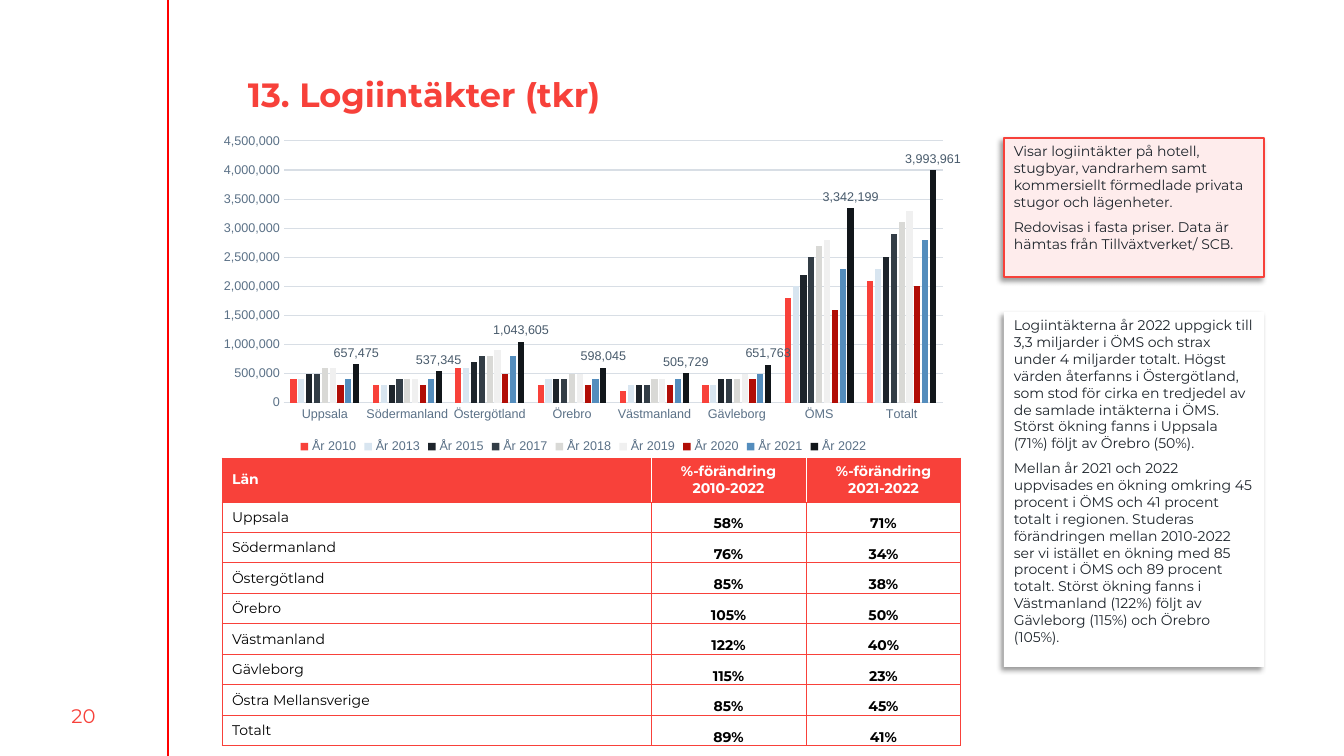
from lxml import etree
from pptx import Presentation
from pptx.chart.data import CategoryChartData
from pptx.dml.color import RGBColor
from pptx.enum.chart import XL_CHART_TYPE, XL_LABEL_POSITION, XL_LEGEND_POSITION, XL_TICK_MARK
from pptx.enum.shapes import MSO_CONNECTOR, MSO_SHAPE
from pptx.enum.text import MSO_ANCHOR, PP_ALIGN
from pptx.oxml import parse_xml
from pptx.oxml.ns import nsdecls, qn
from pptx.util import Emu, Pt

CLUSTERED = XL_CHART_TYPE.COLUMN_CLUSTERED
OUTSIDE_END = XL_LABEL_POSITION.OUTSIDE_END
LEGEND_BOTTOM = XL_LEGEND_POSITION.BOTTOM
NO_TICK = XL_TICK_MARK.NONE
STRAIGHT = MSO_CONNECTOR.STRAIGHT
RECTANGLE = MSO_SHAPE.RECTANGLE
TOP, MIDDLE, BOTTOM = MSO_ANCHOR.TOP, MSO_ANCHOR.MIDDLE, MSO_ANCHOR.BOTTOM
LEFT, CENTER = PP_ALIGN.LEFT, PP_ALIGN.CENTER

RED = RGBColor(0xF7, 0x41, 0x3A)
TABLE_RED = RGBColor(0xF8, 0x41, 0x3A)
RULE_RED = RGBColor(0xFF, 0x00, 0x00)
PINK = RGBColor(0xFE, 0xEC, 0xEC)
WHITE = RGBColor(0xFF, 0xFF, 0xFF)
BLACK = RGBColor(0x00, 0x00, 0x00)
INK = RGBColor(0x1D, 0x24, 0x2B)
AXIS_TEXT = RGBColor(0x5B, 0x71, 0x87)
LABEL_TEXT = RGBColor(0x49, 0x5B, 0x6C)
GRID = RGBColor(0xD8, 0xDE, 0xE5)
PX = 914400 / 100.8


def px(*lengths):
    """Turn pixel lengths into EMU."""
    return [Emu(round(length * PX)) for length in lengths]


def style(font, size, color, name="Montserrat", bold=False):
    font.size, font.name, font.bold = Pt(size), name, bold
    font.color.rgb = color


prs = Presentation()
prs.slide_width, prs.slide_height = px(1344, 756)
slide = prs.slides.add_slide(prs.slide_layouts[6])
shapes = slide.shapes

# Margin rule, page number and title
margin_rule = shapes.add_connector(STRAIGHT, *px(168, 0, 168, 756))
margin_rule.line.color.rgb = RULE_RED
margin_rule.line.width = Pt(0.75)
etree.SubElement(margin_rule._element.spPr, qn("a:effectLst"))

headings = [
    ("20", (0, 696, 167, 40), 14, False, CENTER, MIDDLE),
    ("13. Logiintäkter (tkr)", (243, 69, 1020, 90), 24, True, LEFT, TOP),
]
for text, place, size, bold, align, anchor in headings:
    frame = shapes.add_textbox(*px(*place)).text_frame
    frame.word_wrap = True
    frame.vertical_anchor = anchor
    frame.margin_left, frame.margin_right, frame.margin_top, frame.margin_bottom = px(5, 5, 5, 5)
    paragraph = frame.paragraphs[0]
    paragraph.alignment = align
    run = paragraph.add_run()
    run.text = text
    style(run.font, size, RED, bold=bold)

# Comment boxes
comments = [
    ((1004, 138, 260, 139), PINK, RED, [
        "Visar logiintäkter på hotell, stugbyar, vandrarhem samt kommersiellt förmedlade "
        "privata stugor och lägenheter.",
        "Redovisas i fasta priser. Data är hämtas från Tillväxtverket/ SCB.",
    ]),
    ((1004, 312, 260, 355), WHITE, None, [
        "Logiintäkterna år 2022 uppgick till 3,3 miljarder i ÖMS och strax under 4 miljarder "
        "totalt. Högst värden återfanns i Östergötland, som stod för cirka en tredjedel av de "
        "samlade intäkterna i ÖMS. Störst ökning fanns i Uppsala (71%) följt av Örebro (50%).",
        "Mellan år 2021 och 2022 uppvisades en ökning omkring 45 procent i ÖMS och 41 procent "
        "totalt i regionen. Studeras förändringen mellan 2010-2022 ser vi istället en ökning "
        "med 85 procent i ÖMS och 89 procent totalt. Störst ökning fanns i Västmanland (122%) "
        "följt av Gävleborg (115%) och Örebro (105%).",
    ]),
]
for place, fill, outline, paragraphs in comments:
    comment = shapes.add_shape(RECTANGLE, *px(*place))
    comment.fill.solid()
    comment.fill.fore_color.rgb = fill
    if outline:
        comment.line.color.rgb = outline
        comment.line.width = Pt(1)
    else:
        comment.line.fill.background()
    comment.shadow.inherit = False
    comment._element.spPr.find(qn("a:effectLst")).append(parse_xml(
        f'<a:outerShdw {nsdecls("a")} blurRad="{Pt(4)}" dist="{Pt(3)}" dir="8100000" '
        'algn="tr" rotWithShape="0"><a:srgbClr val="000000"><a:alpha val="40000"/>'
        '</a:srgbClr></a:outerShdw>'))
    frame = comment.text_frame
    frame.word_wrap = True
    frame.vertical_anchor = TOP
    for i, text in enumerate(paragraphs):
        paragraph = frame.add_paragraph() if i else frame.paragraphs[0]
        paragraph.alignment = LEFT
        paragraph.space_before = Pt(3 if i else 0)
        paragraph.space_after = Pt(3)
        run = paragraph.add_run()
        run.text = text
        style(run.font, 10, INK)

# Table of changes per county
changes = [
    ("Län", "%-förändring 2010-2022", "%-förändring 2021-2022"),
    ("Uppsala", "58%", "71%"),
    ("Södermanland", "76%", "34%"),
    ("Östergötland", "85%", "38%"),
    ("Örebro", "105%", "50%"),
    ("Västmanland", "122%", "40%"),
    ("Gävleborg", "115%", "23%"),
    ("Östra Mellansverige", "85%", "45%"),
    ("Totalt", "89%", "41%"),
]
HEADER_HEIGHT, TABLE_HEIGHT = 44, 288
body_height = (TABLE_HEIGHT - HEADER_HEIGHT) / (len(changes) - 1)
table = shapes.add_table(len(changes), 3, *px(222, 458, 739, TABLE_HEIGHT)).table
table.horz_banding = False
for column, width in zip(table.columns, px(429, 155, 155)):
    column.width = width
for r, values in enumerate(changes):
    header = r == 0
    table.rows[r].height = px(HEADER_HEIGHT if header else body_height)[0]
    for c, text in enumerate(values):
        cell = table.cell(r, c)
        figure = c > 0 and not header
        cell.vertical_anchor = BOTTOM if figure else MIDDLE
        if figure:
            cell.margin_left, cell.margin_right, cell.margin_top, cell.margin_bottom = px(1, 1, 1, 0)
        if header:
            cell.fill.solid()
            cell.fill.fore_color.rgb = TABLE_RED
        else:
            cell.fill.background()
        borders = {
            "lnL": WHITE if header and c > 0 else TABLE_RED,
            "lnR": WHITE if header and c < 2 else TABLE_RED,
            "lnT": TABLE_RED,
            "lnB": TABLE_RED,
        }
        for i, (side, color) in enumerate(borders.items()):
            cell._tc.get_or_add_tcPr().insert(i, parse_xml(
                f'<a:{side} {nsdecls("a")} w="{Pt(0.75)}"><a:solidFill>'
                f'<a:srgbClr val="{color}"/></a:solidFill></a:{side}>'))
        paragraph = cell.text_frame.paragraphs[0]
        paragraph.alignment = CENTER if c else LEFT
        run = paragraph.add_run()
        run.text = text
        style(run.font, 10, WHITE if header else BLACK, bold=header or figure)

# Chart of revenue per county and year; earlier years in hundreds of thousands
HUNDRED_THOUSAND = 100000
earlier_years = [
    ("År 2010", "F8413A", (4, 3, 6, 3, 2, 3, 18, 21)),
    ("År 2013", "D8E5F0", (4, 3, 6, 4, 3, 3, 20, 23)),
    ("År 2015", "1D242B", (5, 3, 7, 4, 3, 4, 22, 25)),
    ("År 2017", "333D46", (5, 4, 8, 4, 3, 4, 25, 29)),
    ("År 2018", "D9D9D6", (6, 4, 8, 5, 4, 4, 27, 31)),
    ("År 2019", "F0F0F0", (6, 4, 9, 5, 4, 5, 28, 33)),
    ("År 2020", "B10D06", (3, 3, 5, 3, 3, 4, 16, 20)),
    ("År 2021", "548DBD", (4, 4, 8, 4, 4, 5, 23, 28)),
]
revenue = CategoryChartData(number_format="#,##0")
revenue.categories = ["Uppsala", "Södermanland", "Östergötland", "Örebro",
                      "Västmanland", "Gävleborg", "ÖMS", "Totalt"]
for year, _, values in earlier_years:
    revenue.add_series(year, [value * HUNDRED_THOUSAND for value in values])
revenue.add_series("År 2022", (657475, 537345, 1043605, 598045, 505729, 651763, 3342199, 3993961))

chart = shapes.add_chart(CLUSTERED, *px(209, 127, 752, 331), revenue).chart
style(chart.font, 10, INK, "Arial")
chart.has_title = False
chart.has_legend = True
chart.legend.position = LEGEND_BOTTOM
chart.legend.include_in_layout = False
style(chart.legend.font, 9, AXIS_TEXT, "Arial")

counties, amounts = chart.category_axis, chart.value_axis
for axis in (counties, amounts):
    axis.major_tick_mark = axis.minor_tick_mark = NO_TICK
    style(axis.tick_labels.font, 9, AXIS_TEXT, "Arial")
amounts.minimum_scale, amounts.maximum_scale, amounts.major_unit = 0, 4500000, 500000
amounts.tick_labels.number_format = "#,##0"
amounts.tick_labels.number_format_is_linked = False
amounts.format.line.fill.background()
for line in (counties.format.line, amounts.major_gridlines.format.line):
    line.color.rgb = GRID
    line.width = Pt(0.75)

plot = chart.plots[0]
plot.gap_width, plot.overlap = 219, -27
plot.vary_by_categories = False
year_colors = [color for _, color, _ in earlier_years] + ["11161A"]
for series, color in zip(plot.series, year_colors):
    series.format.fill.solid()
    series.format.fill.fore_color.rgb = RGBColor.from_string(color)

labels = plot.series[-1].data_labels
labels.show_value = True
labels.position = OUTSIDE_END
labels.number_format = "#,##0"
labels.number_format_is_linked = False
style(labels.font, 9, LABEL_TEXT, "Arial")

prs.save("out.pptx")
